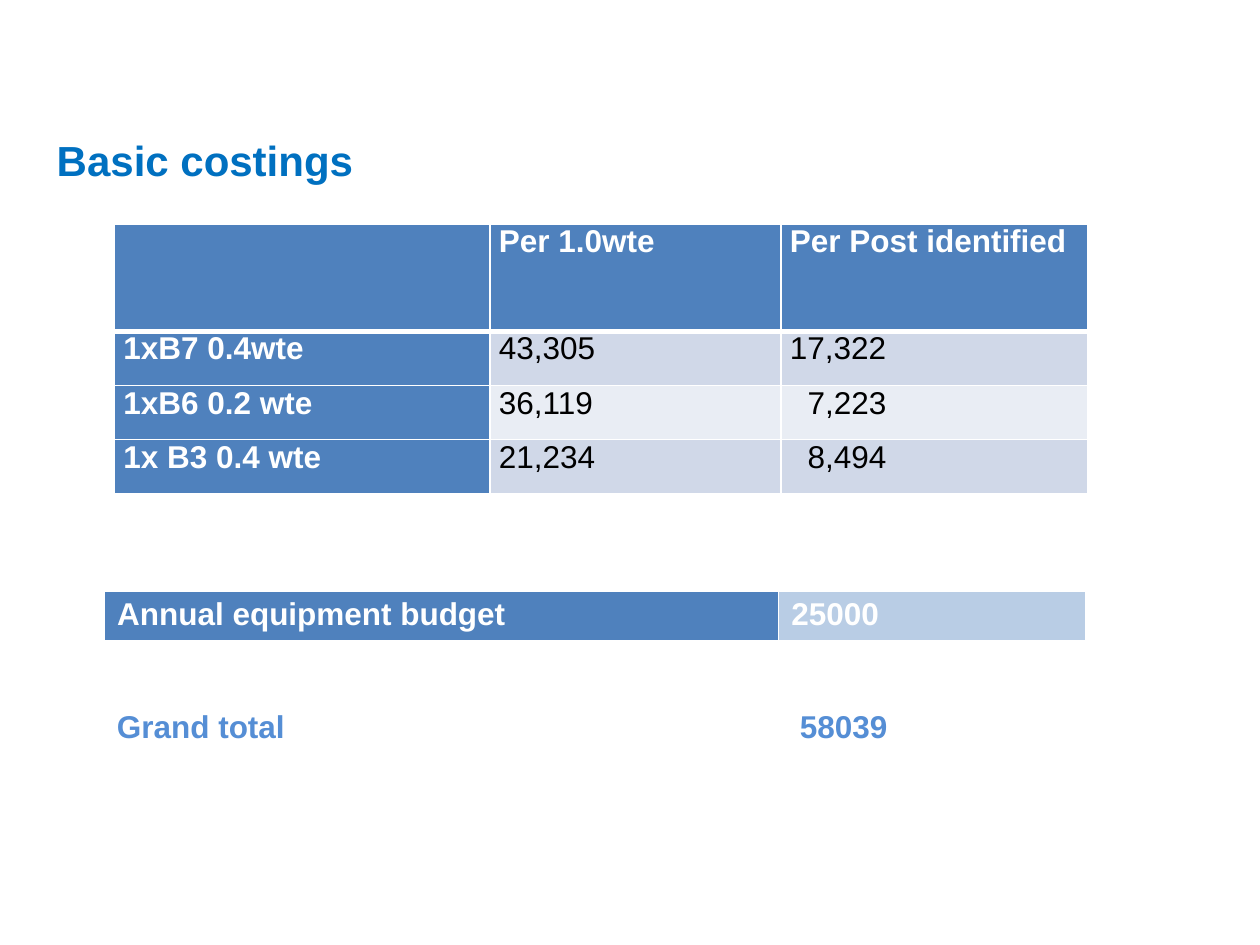
import pptx
import pptx.dml.color
import pptx.enum.text
import pptx.oxml
import pptx.oxml.ns
import pptx.util
from pptx.util import Inches

COLORS = {
    "title": "0070C0", "header": "4F81BD", "odd": "D0D8E8", "even": "E9EDF4",
    "budget": "B9CDE5", "total": "558ED5", "white": "FFFFFF", "black": "000000",
}
FONT = "Arial"
TITLE = "Basic costings"
COSTS = [
    ["", "Per 1.0wte", "Per Post identified"],
    ["1xB7 0.4wte", "43,305", "17,322"],
    ["1xB6 0.2 wte", "36,119", "7,223"],
    ["1x B3 0.4 wte", "21,234", "8,494"],
]
BUDGET = [["Annual equipment budget", "25000"]]
TOTAL = "Grand total\t58039"
DIGIT_INDENT = 0.14


def format_text(text_frame, color, size=18, bold=True):
    for run in text_frame.paragraphs[0].runs:
        run.font.name = FONT
        run.font.size = pptx.util.Pt(size)
        run.font.bold = bold
        run.font.color.rgb = pptx.dml.color.RGBColor.from_string(COLORS[color])


def set_borders(cell, bottom_width):
    properties = cell._tc.get_or_add_tcPr()
    widths = {"lnL": 1, "lnR": 1, "lnT": 1, "lnB": bottom_width}
    for position, (side, width) in enumerate(widths.items()):
        line = pptx.oxml.parse_xml(
            f'<a:{side} {pptx.oxml.ns.nsdecls("a")} w="{pptx.util.Pt(width)}">'
            f'<a:solidFill><a:srgbClr val="{COLORS["white"]}"/></a:solidFill></a:{side}>'
        )
        properties.insert(position, line)


def add_grid(slide, rows, left, top, widths, heights):
    shape = slide.shapes.add_table(
        len(rows), len(widths), Inches(left), Inches(top),
        Inches(sum(widths)), Inches(sum(heights)),
    )
    table = shape.table
    for column, width in zip(table.columns, widths):
        column.width = Inches(width)
    for row, height in zip(table.rows, heights):
        row.height = Inches(height)
    for row_index, values in enumerate(rows):
        for column_index, value in enumerate(values):
            table.cell(row_index, column_index).text_frame.text = value
    return table


def style_cell(cell, fill, color, bold=True, bottom_width=1):
    cell.fill.solid()
    cell.fill.fore_color.rgb = pptx.dml.color.RGBColor.from_string(COLORS[fill])
    set_borders(cell, bottom_width)
    format_text(cell.text_frame, color, bold=bold)


def add_costs(slide):
    table = add_grid(slide, COSTS, 0.91, 1.78, [2.98, 2.31, 2.43], [0.85] + [0.43] * 3)
    for row_index, values in enumerate(COSTS):
        for column_index, value in enumerate(values):
            cell = table.cell(row_index, column_index)
            heading = row_index == 0 or column_index == 0
            band = "odd" if row_index % 2 else "even"
            style_cell(
                cell, "header" if heading else band, "white" if heading else "black",
                heading, 1 if row_index else 3,
            )
            short = column_index == 2 and not heading and len(value) == 5
            cell.margin_left = Inches(0.07 + (DIGIT_INDENT if short else 0))
            cell.margin_right = Inches(0.07)
            cell.margin_top = cell.margin_bottom = 0


def add_budget(slide):
    table = add_grid(slide, BUDGET, 0.83, 4.69, [5.35, 2.44], [0.41])
    for column_index, fill in enumerate(["header", "budget"]):
        style_cell(table.cell(0, column_index), fill, "white", bottom_width=3)


def add_total(slide):
    box = slide.shapes.add_textbox(Inches(0.83), Inches(5.56), Inches(7.8), Inches(0.4))
    box.text_frame.word_wrap = True
    box.text_frame.text = TOTAL
    paragraph = box.text_frame.paragraphs[0]
    paragraph._p.get_or_add_pPr().append(pptx.oxml.parse_xml(
        f'<a:tabLst {pptx.oxml.ns.nsdecls("a")}>'
        f'<a:tab pos="{Inches(5.42)}" algn="l"/></a:tabLst>'
    ))
    format_text(box.text_frame, "total")


def add_title(slide):
    title = slide.shapes.title
    title.left, title.top = Inches(0.35), Inches(0.99)
    title.width, title.height = Inches(9.29), Inches(0.55)
    title.text_frame.text = TITLE
    title.text_frame.vertical_anchor = pptx.enum.text.MSO_ANCHOR.MIDDLE
    title.text_frame.paragraphs[0].alignment = pptx.enum.text.PP_ALIGN.LEFT
    format_text(title.text_frame, "title", 24)


def main():
    presentation = pptx.Presentation()
    presentation.slide_width = Inches(10)
    presentation.slide_height = Inches(7.5)
    slide = presentation.slides.add_slide(presentation.slide_layouts[5])
    add_title(slide)
    add_costs(slide)
    add_budget(slide)
    add_total(slide)
    presentation.save("out.pptx")


if __name__ == "__main__":
    main()
